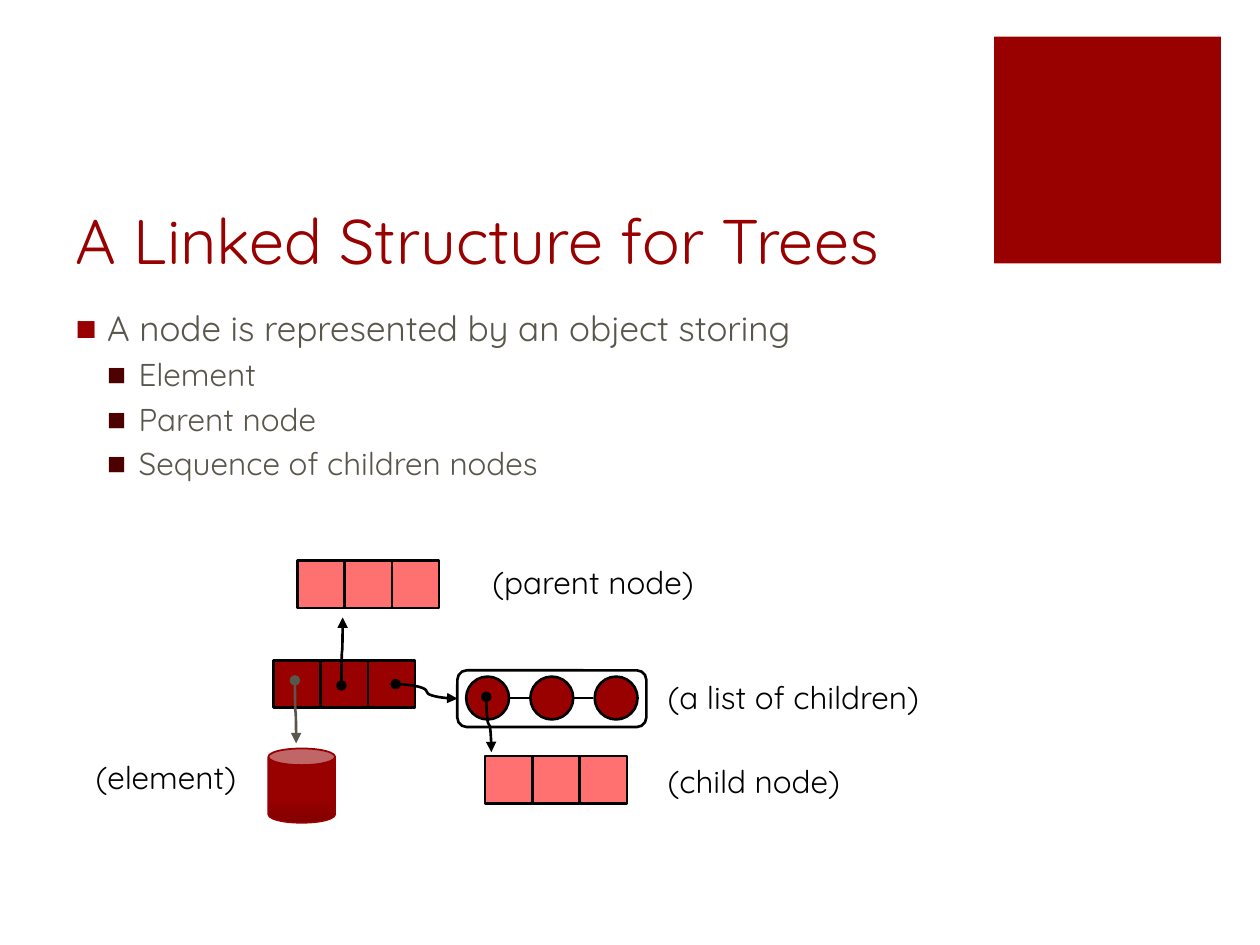
from dataclasses import dataclass

from lxml import etree
from pptx import Presentation
from pptx import util as u
from pptx.dml.color import RGBColor
from pptx.enum import shapes, text
from pptx.oxml.ns import qn

COLORS = {
    "red": "990000",
    "dark": "4C0000",
    "shade": "830000",
    "rim": "960000",
    "pink": "FF7070",
    "gray": "59564B",
    "black": "000000",
}
FONT = "Quicksand"
CELL = 0.375
SHAPE = shapes.MSO_SHAPE


@dataclass
class Item:
    words: str
    level: int
    size: int
    before: int
    color: str
    bullet: str


@dataclass
class Label:
    words: str
    left: float
    top: float
    width: float


@dataclass
class Node:
    left: float
    top: float
    color: str


@dataclass
class Pointer:
    start: tuple[float, float]
    end: tuple[float, float]
    color: str = "black"


ITEMS = [Item("A node is represented by an object storing", 0, 20, 18, "gray", "red")] + [
    Item(words, 1, 18, 6, "gray", "dark")
    for words in ("Element", "Parent node", "Sequence of children nodes")
]
LABELS = [
    Label("(element)", 0.66, 5.97, 1.41),
    Label("(parent node)", 3.81, 4.42, 1.94),
    Label("(a list of children)", 5.2, 5.33, 2.28),
    Label("(child node)", 5.2, 6, 1.71),
]
NODES = [Node(2.17, 5.24, "red"), Node(2.36, 4.45, "pink"), Node(3.85, 6, "pink")]
VERTICAL_POINTERS = [
    Pointer((2.34, 5.4), (2.35, 5.9), "gray"),
    Pointer((2.71, 5.44), (2.72, 4.9)),
    Pointer((3.86, 5.53), (3.9, 5.97)),
]
LIST_POINTER = Pointer((3.14, 5.43), (3.63, 5.54))


def rgb(name: str) -> RGBColor:
    return RGBColor.from_string(COLORS[name])


def apply(target, values: dict) -> None:
    for name, value in values.items():
        setattr(target, name, value)


def place(box, left: float, top: float, width: float, height: float) -> None:
    sides = {"left": left, "top": top, "width": width, "height": height}
    apply(box, {name: u.Inches(value) for name, value in sides.items()})


def write(para, words: str, size: int, color: str) -> None:
    span = para.add_run()
    span.text = words
    apply(span.font, {"name": FONT, "size": u.Pt(size)})
    span.font.color.rgb = rgb(color)


def add_box(parent, kind, bounds: tuple, fill: str | None, line: str | None = "black"):
    box = parent.add_shape(kind, *map(u.Inches, bounds))
    box.shadow.inherit = False
    if fill:
        box.fill.solid()
        box.fill.fore_color.rgb = rgb(fill)
    else:
        box.fill.background()
    if line:
        box.line.color.rgb = rgb(line)
        box.line.width = u.Pt(1.5)
    else:
        box.line.fill.background()
    return box


def add_line(page, kind, start: tuple, end: tuple, color: str = "black"):
    line = page.shapes.add_connector(kind, *map(u.Inches, (*start, *end)))
    line.line.color.rgb = rgb(color)
    line.line.width = u.Pt(1.5)
    etree.SubElement(line._element.spPr, qn("a:effectLst"))
    return line


def add_pointer(page, pointer: Pointer, vertical: bool = False):
    start, end = pointer.start, pointer.end
    if vertical:
        middle_x, middle_y = (start[0] + end[0]) / 2, (start[1] + end[1]) / 2
        half_x, half_y = (end[0] - start[0]) / 2, (end[1] - start[1]) / 2
        start = middle_x + half_y, middle_y - half_x
        end = middle_x - half_y, middle_y + half_x
    line = add_line(page, shapes.MSO_CONNECTOR.CURVE, start, end, pointer.color)
    if vertical:
        line._element.spPr.find(qn("a:xfrm")).set("rot", str(270 * 60000))
    stroke = line.line._get_or_add_ln()
    for tag, kind in (("a:headEnd", "oval"), ("a:tailEnd", "triangle")):
        etree.SubElement(stroke, qn(tag), type=kind)
    return line


def add_node(page, node: Node) -> None:
    group = page.shapes.add_group_shape()
    for column in range(3):
        bounds = (node.left + column * CELL, node.top, CELL, CELL)
        add_box(group.shapes, SHAPE.RECTANGLE, bounds, node.color)


def add_label(page, label: Label) -> None:
    bounds = (label.left, label.top, label.width, 0.4)
    box = page.shapes.add_textbox(*map(u.Inches, bounds))
    apply(box.text_frame, {"word_wrap": False, "auto_size": text.MSO_AUTO_SIZE.SHAPE_TO_FIT_TEXT})
    write(box.text_frame.paragraphs[0], label.words, 18, "black")


def add_item(para, item: Item) -> None:
    apply(para, {"level": item.level, "line_spacing": 0.9, "space_before": u.Pt(item.before)})
    write(para, item.words, item.size, item.color)
    layout = para._p.get_or_add_pPr()
    layout.set("marL", str(u.Inches(0.25 * (item.level + 1))))
    layout.set("indent", str(u.Inches(-0.25)))
    tint = etree.SubElement(layout, qn("a:buClr"))
    etree.SubElement(tint, qn("a:srgbClr"), val=COLORS[item.bullet])
    etree.SubElement(layout, qn("a:buChar"), char="■")


def add_element(page) -> None:
    can = add_box(page.shapes, SHAPE.CAN, (2.13, 5.94, 0.53, 0.59), "red", "rim")
    can.line.width = u.Pt(1)
    can.fill.gradient()
    can.fill.gradient_angle = 90
    for stop, color, position in zip(can.fill.gradient_stops, ("shade", "red"), (0, 0.35)):
        stop.color.rgb = rgb(color)
        stop.position = position


def main() -> None:
    deck = Presentation()
    apply(deck, {"slide_width": u.Inches(10), "slide_height": u.Inches(7.5)})
    page = deck.slides.add_slide(deck.slide_layouts[1])
    add_box(page.shapes, SHAPE.RECTANGLE, (7.89, 0.29, 1.8, 1.8), "red", None)

    title, body = page.shapes.title, page.placeholders[1]
    place(title, 0.5, 1, 7.12, 1.25)
    title.text_frame.vertical_anchor = text.MSO_ANCHOR.BOTTOM
    heading = title.text_frame.paragraphs[0]
    heading.alignment = text.PP_ALIGN.LEFT
    write(heading, "A Linked Structure for Trees", 36, "red")

    place(body, 0.5, 2.42, 7.12, 4.28)
    for index, item in enumerate(ITEMS):
        frame = body.text_frame
        add_item(frame.add_paragraph() if index else frame.paragraphs[0], item)

    for node in NODES:
        add_node(page, node)
    children = add_box(page.shapes, SHAPE.ROUNDED_RECTANGLE, (3.63, 5.32, 1.5, 0.45), None)
    add_line(page, shapes.MSO_CONNECTOR.STRAIGHT, (4.71, 5.54), (4.05, 5.54))
    for column in range(3):
        add_box(page.shapes, SHAPE.OVAL, (3.7 + column * 0.51, 5.37, 0.34, 0.34), "red")
    add_element(page)
    for pointer in VERTICAL_POINTERS:
        add_pointer(page, pointer, vertical=True)
    add_pointer(page, LIST_POINTER).end_connect(children, 1)
    for label in LABELS:
        add_label(page, label)
    deck.save("out.pptx")


if __name__ == "__main__":
    main()
